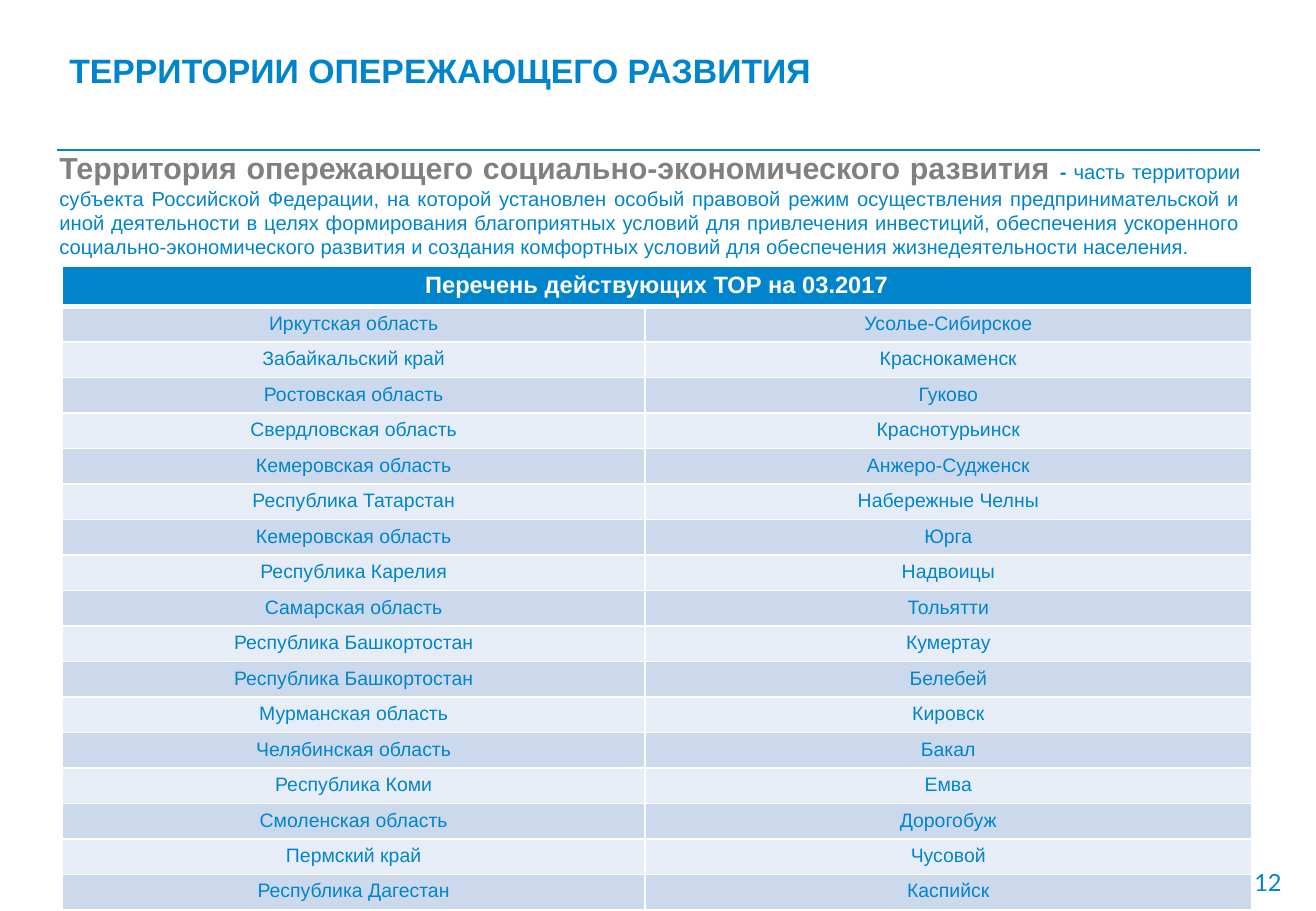
import pptx
import pptx.util
import pptx.dml.color
import pptx.enum.shapes
import pptx.enum.text
import pptx.oxml.ns
from lxml import etree

Pt = pptx.util.Pt
Align = pptx.enum.text.PP_ALIGN
Anchor = pptx.enum.text.MSO_ANCHOR
qn = pptx.oxml.ns.qn

COLORS = {
    "blue": "0085CD",
    "gray": "808080",
    "white": "FFFFFF",
    "dark": "CCD9ED",
    "light": "E7EDF6",
}

TOWNS = [
    ("Иркутская область", "Усолье-Сибирское"),
    ("Забайкальский край", "Краснокаменск"),
    ("Ростовская область", "Гуково"),
    ("Свердловская область", "Краснотурьинск"),
    ("Кемеровская область", "Анжеро-Судженск"),
    ("Республика Татарстан", "Набережные Челны"),
    ("Кемеровская область", "Юрга"),
    ("Республика Карелия", "Надвоицы"),
    ("Самарская область", "Тольятти"),
    ("Республика Башкортостан", "Кумертау"),
    ("Республика Башкортостан", "Белебей"),
    ("Мурманская область", "Кировск"),
    ("Челябинская область", "Бакал"),
    ("Республика Коми", "Емва"),
    ("Смоленская область", "Дорогобуж"),
    ("Пермский край", "Чусовой"),
    ("Республика Дагестан", "Каспийск"),
]


def write(frame, parts, align, anchor=Anchor.TOP):
    """Fill one paragraph with runs of (text, size, color, bold, font)."""
    frame.word_wrap = True
    frame.vertical_anchor = anchor
    para = frame.paragraphs[0]
    para.alignment = align
    for text, size, color, bold, face in parts:
        run = para.add_run()
        run.text = text
        run.font.size = Pt(size)
        run.font.name = face
        run.font.bold = bold
        run.font.color.rgb = pptx.dml.color.RGBColor.from_string(COLORS[color])


def style(cell, fill, top, bottom):
    """Give a cell its fill and white borders."""
    cell.fill.solid()
    cell.fill.fore_color.rgb = pptx.dml.color.RGBColor.from_string(COLORS[fill])
    props = cell._tc.get_or_add_tcPr()
    widths = {"a:lnL": 1, "a:lnR": 1, "a:lnT": top, "a:lnB": bottom}
    for spot, (tag, width) in enumerate(widths.items()):
        edge = etree.Element(qn(tag), w=str(Pt(width)))
        paint = etree.SubElement(edge, qn("a:solidFill"))
        etree.SubElement(paint, qn("a:srgbClr"), val=COLORS["white"])
        props.insert(spot, edge)


deck = pptx.Presentation()
deck.slide_width, deck.slide_height = Pt(780), Pt(540)
slide = deck.slides.add_slide(deck.slide_layouts[6])
shapes = slide.shapes

# Rule under the title
rule = shapes.add_connector(
    pptx.enum.shapes.MSO_CONNECTOR.STRAIGHT, Pt(34), Pt(88.8), Pt(746.8), Pt(88.8))
rule.line.width = Pt(1)
rule.line.color.rgb = pptx.dml.color.RGBColor.from_string(COLORS["blue"])
etree.SubElement(rule._element.spPr, qn("a:effectLst"))

# Title
title = shapes.add_textbox(Pt(34), Pt(26.2), Pt(712.8), Pt(62.6))
write(title.text_frame,
      [("ТЕРРИТОРИИ ОПЕРЕЖАЮЩЕГО РАЗВИТИЯ", 20, "blue", True, "Arial")], Align.LEFT)

# Page number
number = shapes.add_textbox(Pt(699), Pt(514), Pt(67.8), Pt(17.3))
write(number.text_frame, [("12", 14, "blue", False, "Lato")], Align.RIGHT, Anchor.MIDDLE)

# Definition
about = shapes.add_textbox(Pt(28.1), Pt(85), Pt(714.2), Pt(72.7))
write(about.text_frame, [
    ("Территория опережающего социально-экономического развития ",
     18, "gray", True, "Arial"),
    ("- ", 12, "blue", True, "Arial"),
    ("часть территории субъекта Российской Федерации, на которой установлен особый "
     "правовой режим осуществления предпринимательской и иной деятельности в целях "
     "формирования благоприятных условий для привлечения инвестиций, обеспечения "
     "ускоренного социально-экономического развития и создания комфортных условий "
     "для обеспечения жизнедеятельности населения.", 12, "blue", False, "Arial"),
], Align.JUSTIFY)

# Table of territories
table = shapes.add_table(
    len(TOWNS) + 1, 2, Pt(36.8), Pt(157.7), Pt(704.9), Pt(381)).table
table.columns[0].width, table.columns[1].width = Pt(345.6), Pt(359.3)
for row in table.rows:
    row.height = Pt(21)
table.rows[0].height = Pt(24)

# Header row
head = table.cell(0, 0)
head.merge(table.cell(0, 1))
write(head.text_frame,
      [("Перечень действующих ТОР на 03.2017", 14, "white", True, "Arial")], Align.CENTER)
for col in range(2):
    style(table.cell(0, col), "blue", 1, 3)

# Body rows
for row, names in enumerate(TOWNS, 1):
    for col, name in enumerate(names):
        cell = table.cell(row, col)
        write(cell.text_frame, [(name, 11.5, "blue", False, "Arial")], Align.CENTER)
        style(cell, "dark" if row % 2 else "light", 3 if row == 1 else 1, 1)

deck.save("out.pptx")
